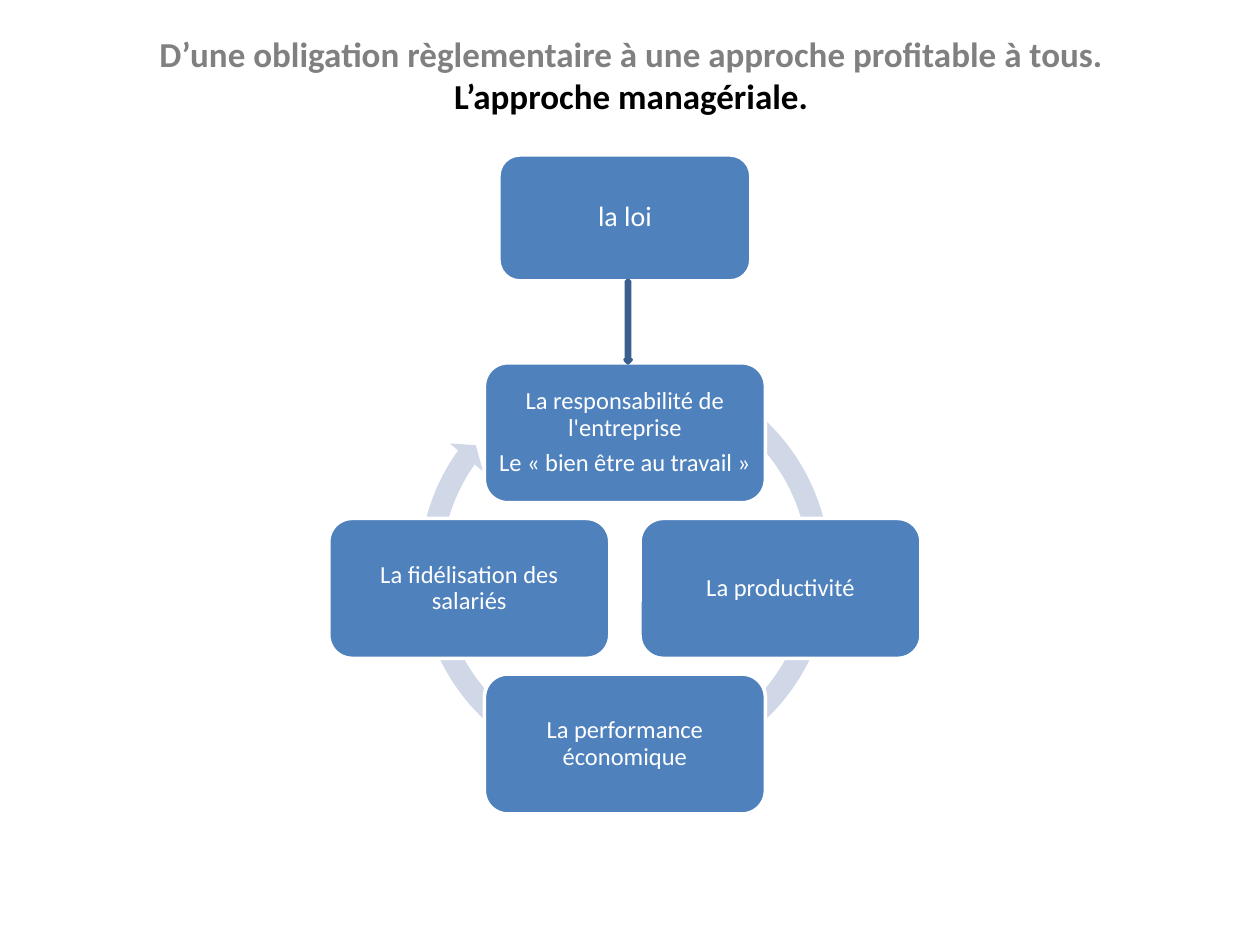
"""Build the slide on the managerial approach: the law drives a cycle of four benefits."""
from pptx import Presentation
from pptx.dml.color import RGBColor
from pptx.enum.shapes import MSO_SHAPE as Shape
from pptx.enum.text import MSO_ANCHOR as Anchor, PP_ALIGN as Align
from pptx.util import Inches, Pt

BLUE = RGBColor(0x4F, 0x81, 0xBD)
DARK_BLUE = RGBColor(0x3A, 0x5F, 0x8C)
PALE_BLUE = RGBColor(0xD0, 0xD8, 0xE8)
GREY = RGBColor(0x80, 0x80, 0x80)
BLACK = RGBColor(0, 0, 0)
WHITE = RGBColor(0xFF, 0xFF, 0xFF)

deck = Presentation()
deck.slide_width, deck.slide_height = Inches(10), Inches(7.5)
page = deck.slides.add_slide(deck.slide_layouts[6])
COLUMN = deck.slide_width / 100
ROW = deck.slide_height / 75


def write(para, text, size=14, color=WHITE, bold=False):
    para.alignment = Align.CENTER
    span = para.add_run()
    span.text = text
    span.font.name = "Calibri"
    span.font.size = Pt(size)
    span.font.bold = bold
    span.font.color.rgb = color


def draw(kind, center, middle, width, height, fill=BLUE, line=None):
    shape = page.shapes.add_shape(
        kind,
        int((center - width / 2) * COLUMN), int((middle - height / 2) * ROW),
        int(width * COLUMN), int(height * ROW))
    shape.shadow.inherit = False
    shape.fill.solid()
    shape.fill.fore_color.rgb = fill
    if line is None:
        shape.line.fill.background()
    else:
        shape.line.color.rgb = line
        shape.line.width = Pt(2)
    return shape


title = page.shapes.add_textbox(
    int(5.1 * COLUMN), int(1.3 * ROW), int(90 * COLUMN), int(12.5 * ROW))
frame = title.text_frame
frame.word_wrap = True
frame.vertical_anchor = Anchor.MIDDLE
frame.margin_bottom = int(3.8 * ROW)
heading = frame.paragraphs[0]
write(heading, "D’une obligation règlementaire à une approche profitable à tous.",
      size=20, color=GREY, bold=True)
heading.add_line_break()
write(heading, "L’approche managériale.", size=20, color=BLACK, bold=True)

center, middle, radius = 49.6, 46.7, 12.35
cycle = draw(Shape.CIRCULAR_ARROW, center, 45.25, 34.3, 34.3, fill=PALE_BLUE)
for index, value in enumerate((0.05, 2.73, 129.25, 179.68, 0.05)):
    cycle.adjustments[index] = value

boxes = [
    (0, -1, ["La responsabilité de l'entreprise", "Le «\u00a0bien être au travail\u00a0»".replace("\u00a0", " ")]),
    (1, 0, ["La productivité"]),
    (0, 1, ["La performance économique"]),
    (-1, 0, ["La fidélisation des salariés"]),
]
cards = [(center + across * radius, middle + down * radius, 22.3, 11.1, 14, lines)
         for across, down, lines in boxes]
cards.append((center, 17.3, 20, 10, 16, ["la loi"]))

for left, top, width, height, size, lines in cards:
    card = draw(Shape.ROUNDED_RECTANGLE, left, top, width, height, line=WHITE)
    frame = card.text_frame
    frame.word_wrap = True
    frame.vertical_anchor = Anchor.MIDDLE
    frame.margin_left = frame.margin_right = int(0.6 * COLUMN)
    frame.margin_top = frame.margin_bottom = int(0.6 * ROW)
    for number, text in enumerate(lines):
        para = frame.add_paragraph() if number else frame.paragraphs[0]
        para.line_spacing = 0.9
        para.space_before = Pt(5 if number else 0)
        write(para, text, size=size)

draw(Shape.DOWN_ARROW, 49.85, 25.55, 0.5, 6.5, line=DARK_BLUE)

deck.save("out.pptx")
